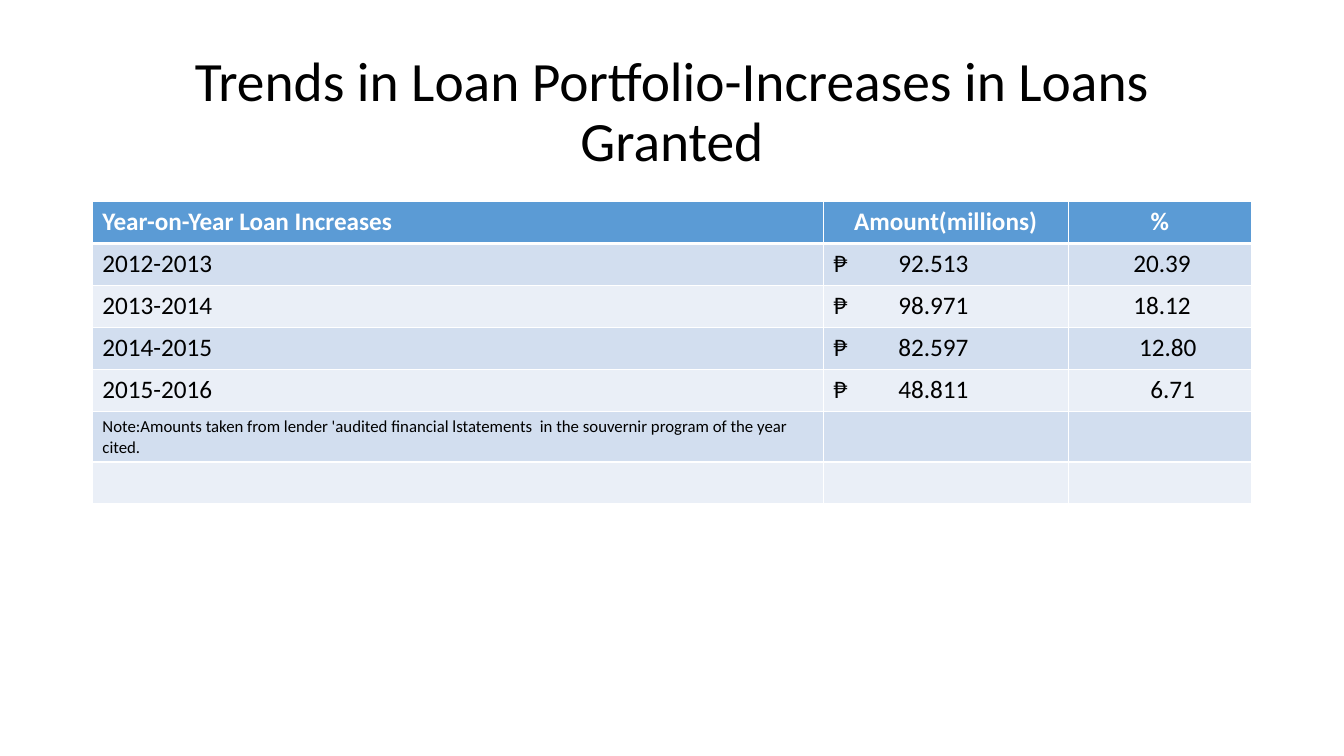
import pptx
import pptx.util
import pptx.dml.color
import pptx.enum.text
import pptx.oxml.ns
import lxml.etree

Pt = pptx.util.Pt
qn = pptx.oxml.ns.qn
Align = pptx.enum.text.PP_ALIGN

HUES = {"text": "000000", "head": "5B9BD5", "odd": "D2DEEF",
        "even": "EAEFF7", "line": "FFFFFF"}
FONT = "Calibri"
TITLE = "Trends in Loan Portfolio-Increases in Loans Granted"
NOTE = ("Note:Amounts taken from lender 'audited financial lstatements  "
        "in the souvernir program of the year cited.")
ROWS = [
    ("Year-on-Year Loan Increases", "Amount(millions)", "%"),
    ("2012-2013", "₱\t92.513", "20.39"),
    ("2013-2014", "₱\t98.971", "18.12"),
    ("2014-2015", "₱\t82.597", "12.80"),
    ("2015-2016", "₱\t48.811", "6.71"),
    (NOTE, "", ""),
    ("", "", ""),
]
SHARES = (7.25, 2.43, 1.82)
INSETS = {1: 39.4, 2: 39.4, 3: 43.5, 4: 51.5}
TAB = 46.5


def color(name):
    return pptx.dml.color.RGBColor.from_string(HUES[name])


def style(para, size, hue, bold=False):
    for run in para.runs:
        run.font.name = FONT
        run.font.size = Pt(size)
        run.font.bold = bold
        run.font.color.rgb = color(hue)


def border(cell, widths):
    props = cell._tc.get_or_add_tcPr()
    for side, width in zip("LRTB", widths):
        line = lxml.etree.SubElement(props, qn("a:ln" + side), w=str(Pt(width)))
        fill = lxml.etree.SubElement(line, qn("a:solidFill"))
        lxml.etree.SubElement(fill, qn("a:srgbClr"), val=HUES["line"])


def add_tab(para, pos):
    stops = lxml.etree.SubElement(para._p.get_or_add_pPr(), qn("a:tabLst"))
    lxml.etree.SubElement(stops, qn("a:tab"), pos=str(Pt(pos)), algn="l")


def add_title(slide, left, top, width, height):
    box = slide.shapes.add_textbox(Pt(left), Pt(top), Pt(width), Pt(height))
    frame = box.text_frame
    frame.word_wrap = True
    frame.vertical_anchor = pptx.enum.text.MSO_ANCHOR.MIDDLE
    frame.text = TITLE
    para = frame.paragraphs[0]
    para.alignment = Align.CENTER
    para.line_spacing = 0.9
    style(para, 39.6, "text")


def fill_cell(cell, text, row, col):
    head = row == 0
    border(cell, (1, 1, 3 if row == 1 else 1, 3 if head else 1))
    cell.fill.solid()
    cell.fill.fore_color.rgb = color("head" if head else ("even", "odd")[row % 2])
    cell.text_frame.text = text
    para = cell.text_frame.paragraphs[0]
    para.font.size = Pt(18)
    style(para, 12 if text == NOTE else 18, "line" if head else "text", head)
    if head and col:
        para.alignment = Align.CENTER
    elif col == 1 and text:
        add_tab(para, TAB)
    elif col == 2 and text:
        cell.margin_left = Pt(7.2 + INSETS[row])


def add_loans(slide, left, top, width, height):
    frame = slide.shapes.add_table(len(ROWS), len(SHARES), Pt(left), Pt(top),
                                   Pt(width), Pt(height))
    table = frame.table
    for col, share in zip(table.columns, SHARES):
        col.width = Pt(width * share / sum(SHARES))
    for row, texts in enumerate(ROWS):
        table.rows[row].height = Pt(height / len(ROWS))
        for col, text in enumerate(texts):
            fill_cell(table.cell(row, col), text, row, col)


def main():
    deck = pptx.Presentation()
    deck.slide_width = Pt(960)
    deck.slide_height = Pt(540)
    slide = deck.slides.add_slide(deck.slide_layouts[6])
    add_title(slide, 66, 28.75, 828, 104.4)
    add_loans(slide, 66, 144, 828, 210)
    deck.save("out.pptx")


if __name__ == "__main__":
    main()
